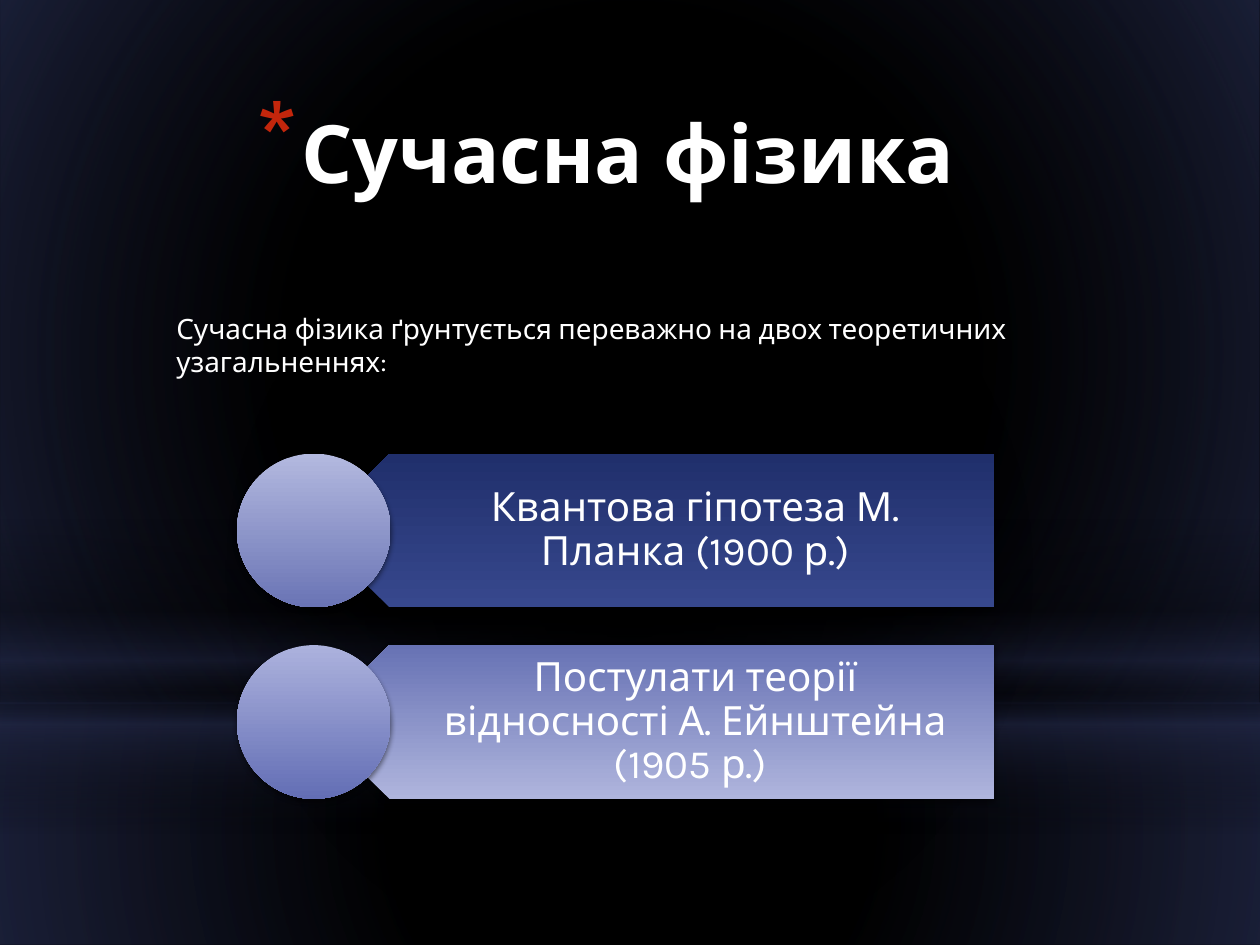
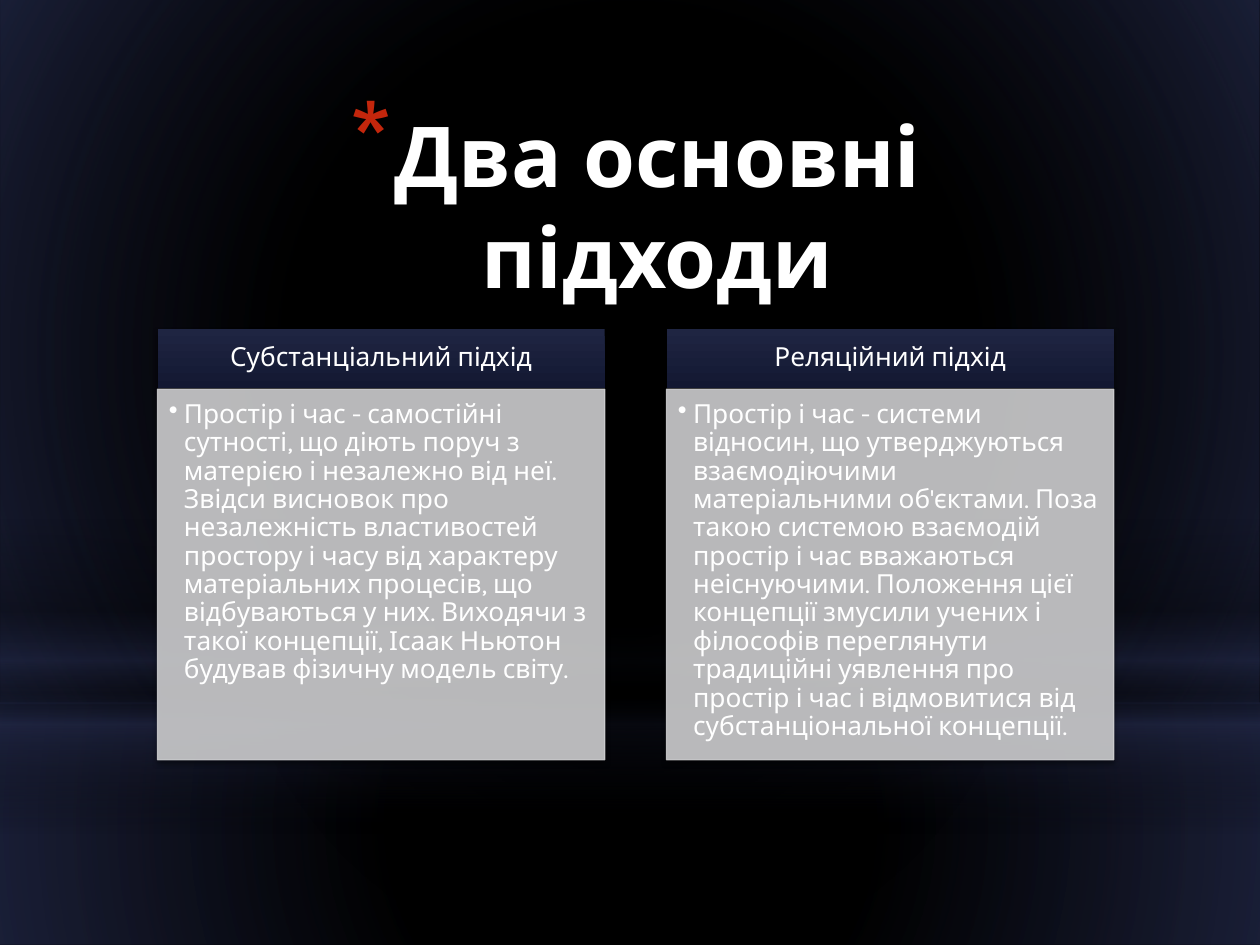
from dataclasses import dataclass

from lxml.etree import SubElement
from pptx import Presentation
from pptx.dml.color import RGBColor
from pptx.enum.shapes import MSO_SHAPE
from pptx.enum.text import MSO_ANCHOR, MSO_AUTO_SIZE, PP_ALIGN
from pptx.oxml import parse_xml
from pptx.oxml.ns import nsdecls, qn
from pptx.util import Pt

PX = 9144


@dataclass(frozen=True)
class Theme:
    font: str = "Karla"
    black: str = "000000"
    navy: str = "212745"
    white: str = "FFFFFF"
    sky: str = "B4DCFA"
    star: str = "C3260C"
    panel: str = "CDCDCF"
    heading: tuple = ("1F2542", "131832")
    body_size: int = 16
    arrow_size: int = 23
    column_size: int = 15


T = Theme()

TITLE_STOPS = [(0, T.white, 100), (40, T.white, 100), (100, T.sky, 65)]
BACKDROP = [
    (MSO_SHAPE.RECTANGLE, (0, 558, 1000, 192), True,
     [(0, T.black, 91), (37, T.black, 76), (100, T.navy, 79)]),
    (MSO_SHAPE.RECTANGLE, (0, 0, 1000, 558), True,
     [(0, T.black, 89), (48, T.black, 62), (100, T.navy, 79)]),
    (MSO_SHAPE.RECTANGLE, (0, 412, 1000, 250), False,
     [(0, T.black, 0), (29, T.black, 30), (45, T.navy, 40),
      (55, T.black, 26), (65, T.navy, 60), (100, T.black, 0)]),
    (MSO_SHAPE.OVAL, (0, 175, 1000, 558), True,
     [(0, T.black, 100), (56, T.black, 0)]),
]
GENERALIZATIONS = [
    ("Квантова гіпотеза М. Планка (1900 р.)",
     ("37488D", "202F6C"), ("B3B9DF", "6A74B5")),
    ("Постулати теорії відносності А. Ейнштейна (1905 р.) ",
     ("AFB5DD", "6772B4"), ("ACB2DD", "636EB5")),
]
APPROACHES = [
    ("Субстанціальний підхід",
     "Простір і час - самостійні сутності, що діють поруч з матерією і "
     "незалежно від неї. Звідси висновок про незалежність властивостей "
     "простору і часу від характеру матеріальних процесів, що відбуваються "
     "у них. Виходячи з такої концепції, Ісаак Ньютон будував фізичну "
     "модель світу."),
    ("Реляційний підхід",
     "Простір і час - системи відносин, що утверджуються взаємодіючими "
     "матеріальними об'єктами. Поза такою системою взаємодій простір і час "
     "вважаються неіснуючими. Положення цієї концепції змусили учених і "
     "філософів переглянути традиційні уявлення про простір і час і "
     "відмовитися від субстанціональної концепції."),
]


def set_attrs(obj, values):
    for name, value in values.items():
        setattr(obj, name, value)


def scaled(box):
    return [v * PX for v in box]


def set_gradient(parent, fill, stops, radial=False):
    gs = "".join(
        f'<a:gs pos="{pos * 1000}"><a:srgbClr val="{color}">'
        f'<a:alpha val="{alpha * 1000}"/></a:srgbClr></a:gs>'
        for pos, color, alpha in stops)
    shade = ('<a:path path="circle"><a:fillToRect l="50000" t="50000" '
             'r="50000" b="50000"/></a:path>' if radial
             else '<a:lin ang="5400000" scaled="0"/>')
    fill.background()
    parent.replace(parent.find(qn("a:noFill")), parse_xml(
        f'<a:gradFill {nsdecls("a")} rotWithShape="1">'
        f'<a:gsLst>{gs}</a:gsLst>{shade}</a:gradFill>'))


def add_figure(slide, kind, box):
    s = slide.shapes.add_shape(kind, *scaled(box))
    s.line.fill.background()
    s.shadow.inherit = False
    return s


def add_shadow(s):
    s._element.spPr.find(qn("a:effectLst")).append(parse_xml(
        f'<a:outerShdw {nsdecls("a")} blurRad="40000" dist="23000" '
        'dir="5400000" rotWithShape="0"><a:srgbClr val="000000">'
        '<a:alpha val="45000"/></a:srgbClr></a:outerShdw>'))


def add_shaded(slide, kind, box, colors):
    s = add_figure(slide, kind, box)
    stops = [(0, colors[0], 100), (100, colors[1], 100)]
    set_gradient(s._element.spPr, s.fill, stops)
    add_shadow(s)
    return s


def set_indent(p, left, hanging, char=None, color=None, percent=None):
    pPr = p._p.get_or_add_pPr()
    pPr.set("marL", str(left * PX))
    pPr.set("indent", str(-hanging * PX))
    if color:
        SubElement(SubElement(pPr, qn("a:buClr")), qn("a:srgbClr"), val=color)
    if percent:
        SubElement(pPr, qn("a:buSzPct"), val=str(percent * 1000))
    if char:
        SubElement(pPr, qn("a:buChar"), char=char)
    else:
        SubElement(pPr, qn("a:buNone"))


def write(tf, text, size, frame, para, bold=False):
    set_attrs(tf, {"word_wrap": True, "auto_size": MSO_AUTO_SIZE.NONE, **frame})
    p = tf.paragraphs[0]
    set_attrs(p, para)
    r = p.add_run()
    r.text = text
    set_attrs(r.font, {"name": T.font, "size": Pt(size), "bold": bold})
    r.font.fill.solid()
    r.font.fill.fore_color.rgb = RGBColor.from_string(T.white)
    return p


def add_label(slide, box, text, size, margins, anchor, para):
    s = slide.shapes.add_textbox(*scaled(box))
    sides = ("margin_left", "margin_top", "margin_right", "margin_bottom")
    frame = dict(zip(sides, scaled(margins)), vertical_anchor=anchor)
    return write(s.text_frame, text, size, frame, {"line_spacing": 0.9, **para})


def place(s, box):
    set_attrs(s, dict(zip(("left", "top", "width", "height"), scaled(box))))


def set_title(slide, text, size, width):
    s = slide.shapes.title
    place(s, (125, 77, width, 125))
    p = write(s.text_frame, text, size, {"vertical_anchor": MSO_ANCHOR.TOP},
              {"alignment": PP_ALIGN.CENTER}, bold=True)
    set_indent(p, 35, 35, "*", T.star, 128)
    r = p.runs[0]
    set_gradient(r._r.get_or_add_rPr(), r.font.fill, TITLE_STOPS)


def set_body(slide, text):
    s = slide.placeholders[1]
    place(s, (125, 242, 700, 380))
    p = write(s.text_frame, text, T.body_size,
              {"vertical_anchor": MSO_ANCHOR.TOP},
              {"space_before": Pt(3.2), "space_after": Pt(3)})
    set_indent(p, 5, 0)


def build_backdrop(prs, slide):
    master = prs.slide_master
    fill = master.background.fill
    fill.solid()
    fill.fore_color.rgb = RGBColor.from_string(T.black)
    first = master.shapes[0]._element
    for i, (kind, box, radial, stops) in enumerate(BACKDROP):
        s = add_figure(slide, kind, box)
        set_gradient(s._element.spPr, s.fill, stops, radial)
        s._element.nvSpPr.cNvPr.set("id", str(100 + i))
        first.addprevious(s._element)


def add_arrow_row(slide, top, text, arrow_colors, disc_colors):
    arrow = add_shaded(slide, MSO_SHAPE.PENTAGON, (248, top, 541, 122),
                       arrow_colors)
    arrow.rotation = 180
    arrow.adjustments[0] = 0.5
    add_label(slide, (279, top, 510, 122), text, T.arrow_size,
              (54, 10, 18, 10), MSO_ANCHOR.MIDDLE,
              {"alignment": PP_ALIGN.CENTER, "space_after": Pt(8)})
    add_shaded(slide, MSO_SHAPE.OVAL, (188, top, 122, 122), disc_colors)


def add_panel(slide, box):
    s = add_figure(slide, MSO_SHAPE.RECTANGLE, box)
    s.line.width = Pt(0.75)
    for fill in (s.fill, s.line.fill):
        fill.solid()
        fill.fore_color.rgb = RGBColor.from_string(T.panel)
    for color in s._element.spPr.iter(qn("a:srgbClr")):
        SubElement(color, qn("a:alpha"), val="90000")
    add_shadow(s)


def add_column(slide, left, heading, text):
    head, panel = (left, 261, 355, 47), (left, 309, 355, 294)
    add_shaded(slide, MSO_SHAPE.RECTANGLE, head, T.heading)
    add_label(slide, head, heading, T.column_size, (12, 7, 12, 7),
              MSO_ANCHOR.MIDDLE,
              {"alignment": PP_ALIGN.CENTER, "space_after": Pt(5.25)})
    add_panel(slide, panel)
    p = add_label(slide, panel, text, T.column_size, (9, 9, 12, 13),
                  MSO_ANCHOR.TOP, {"level": 1, "space_after": Pt(2.25)})
    set_indent(p, 12, 12, "•")


def main():
    prs = Presentation()
    set_attrs(prs, {"slide_width": 1000 * PX, "slide_height": 750 * PX})

    slide = prs.slides.add_slide(prs.slide_layouts[1])
    build_backdrop(prs, slide)
    set_title(slide, "Сучасна фізика", 46, 712)
    set_body(slide, "Сучасна фізика ґрунтується переважно на двох "
                    "теоретичних узагальненнях:")
    for i, row in enumerate(GENERALIZATIONS):
        add_arrow_row(slide, 360 + 152 * i, *row)

    slide = prs.slides.add_slide(prs.slide_layouts[5])
    set_title(slide, "Два основні підходи", 48, 759)
    for i, column in enumerate(APPROACHES):
        add_column(slide, 125 + 404 * i, *column)

    prs.save("out.pptx")


if __name__ == "__main__":
    main()
